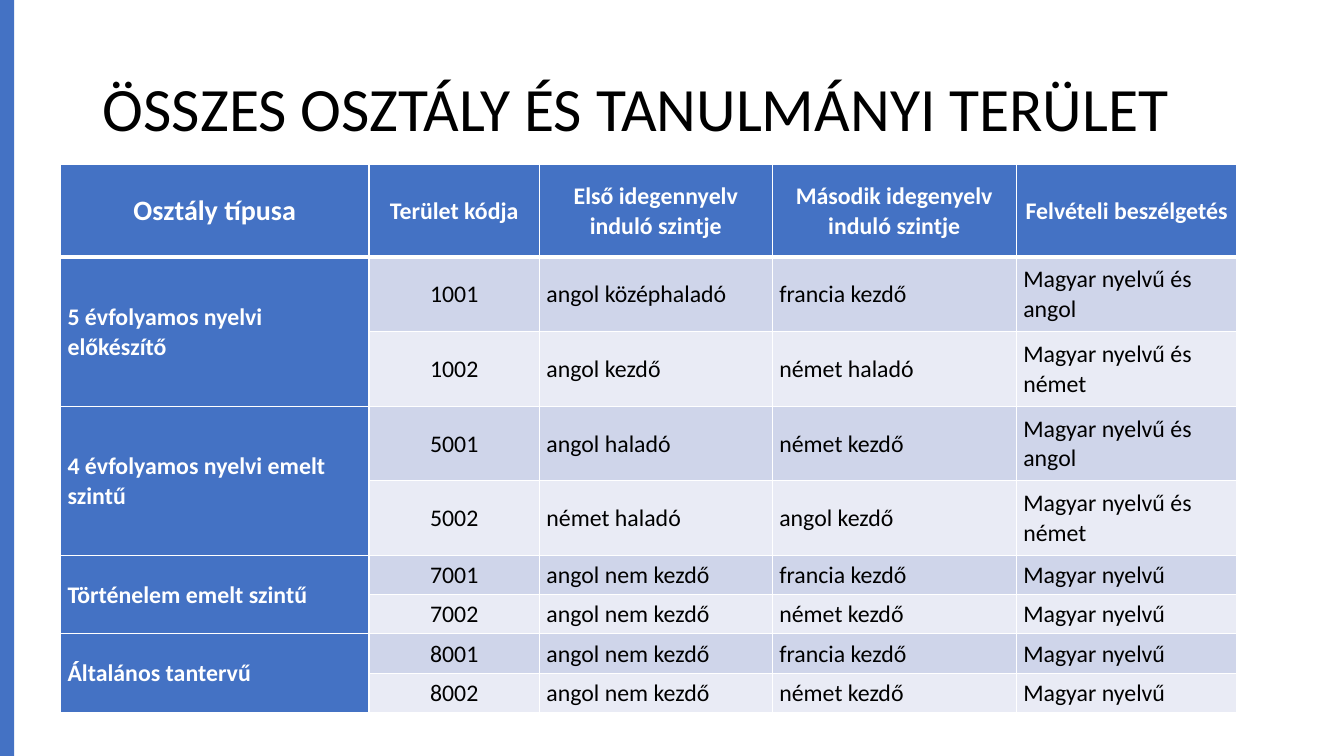
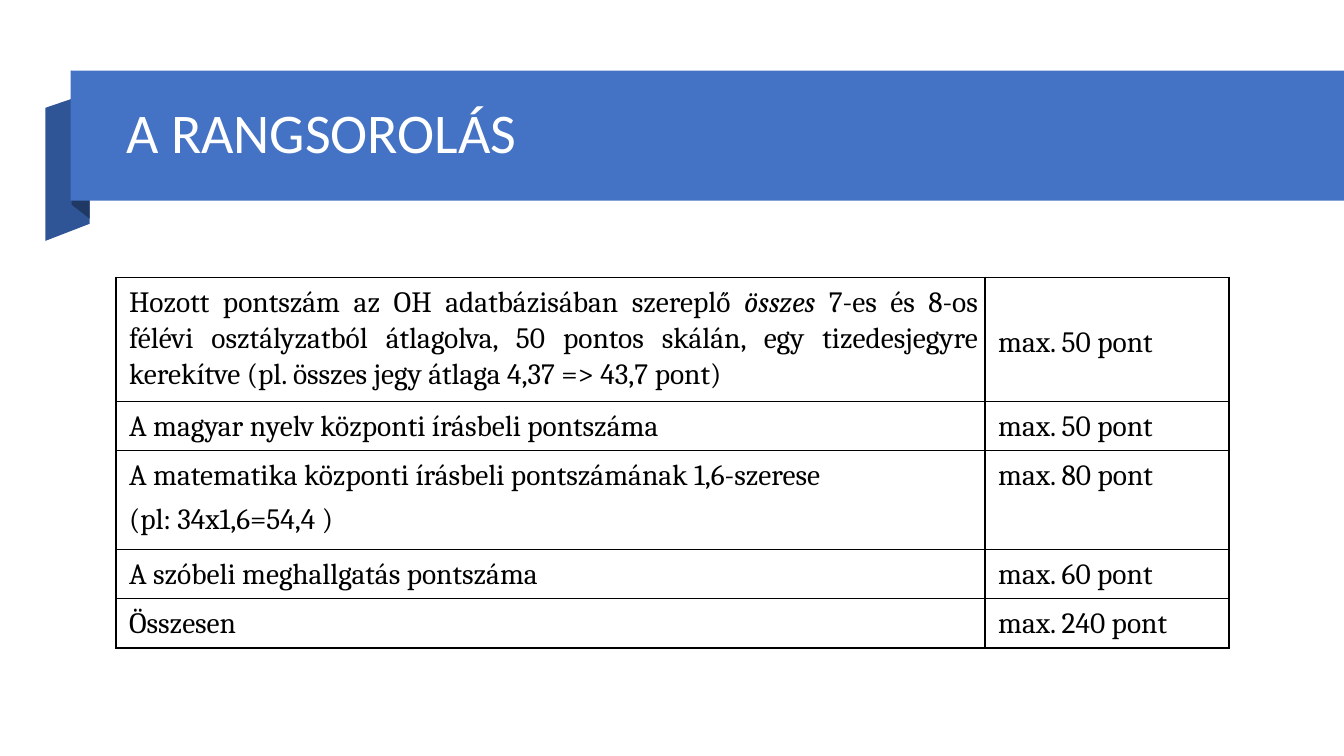
from lxml import etree
from pptx import Presentation
from pptx.dml.color import RGBColor
from pptx.enum.shapes import MSO_SHAPE
from pptx.enum.text import MSO_ANCHOR, MSO_AUTO_SIZE, PP_ALIGN
from pptx.oxml.ns import qn
from pptx.util import Emu, Pt

RECTANGLE = MSO_SHAPE.RECTANGLE
TOP, MIDDLE, BOTTOM = MSO_ANCHOR.TOP, MSO_ANCHOR.MIDDLE, MSO_ANCHOR.BOTTOM
LEFT, CENTER, JUSTIFY = PP_ALIGN.LEFT, PP_ALIGN.CENTER, PP_ALIGN.JUSTIFY
NO_AUTOFIT = MSO_AUTO_SIZE.NONE

EMU_PER_PX = 9144
SLIDE_WIDTH, SLIDE_HEIGHT = 1333, 750
TITLE_ONLY = 5
BLUE, DARK_BLUE, NAVY = "4472C4", "2F5597", "203864"
BAND_COLORS = ("CFD5EA", "E9EBF5")
BLACK, WHITE = "000000", "FFFFFF"
SANS, SERIF = "Calibri", "Cambria"

CLASS_HEADERS = (
    "Osztály típusa",
    "Terület kódja",
    "Első idegennyelv induló szintje",
    "Második idegenyelv induló szintje",
    "Felvételi beszélgetés",
)
CLASS_GROUPS = (
    ("5 évfolyamos nyelvi előkészítő", (
        ("1001", "angol középhaladó", "francia kezdő", "Magyar nyelvű és angol"),
        ("1002", "angol kezdő", "német haladó", "Magyar nyelvű és német"),
    )),
    ("4 évfolyamos nyelvi emelt szintű", (
        ("5001", "angol haladó", "német kezdő", "Magyar nyelvű és angol"),
        ("5002", "német haladó", "angol kezdő", "Magyar nyelvű és német"),
    )),
    ("Történelem emelt szintű", (
        ("7001", "angol nem kezdő", "francia kezdő", "Magyar nyelvű"),
        ("7002", "angol nem kezdő", "német kezdő", "Magyar nyelvű"),
    )),
    ("Általános tantervű", (
        ("8001", "angol nem kezdő", "francia kezdő", "Magyar nyelvű"),
        ("8002", "angol nem kezdő", "német kezdő", "Magyar nyelvű"),
    )),
)
BROUGHT_SCORE = (
    ("Hozott pontszám az OH adatbázisában szereplő ", False),
    ("összes", True),
    (" 7-es és 8-os félévi osztályzatból átlagolva, 50 pontos skálán, "
     "egy tizedesjegyre kerekítve (pl. összes jegy átlaga 4,37 => 43,7 pont)", False),
)
SCORES = (
    ((BROUGHT_SCORE,), "max. 50 pont"),
    (("A magyar nyelv központi írásbeli pontszáma",), "max. 50 pont"),
    (("A matematika központi írásbeli pontszámának 1,6-szerese",
      "(pl: 34x1,6=54,4 )"), "max. 80 pont"),
    (("A szóbeli meghallgatás pontszáma",), "max. 60 pont"),
    (("Összesen",), "max. 240 pont"),
)


def px(length):
    return Emu(length * EMU_PER_PX)


def rgb(color):
    return RGBColor.from_string(color)


def set_font(paragraph, name, size, color, bold=False):
    font = paragraph.font
    font.name, font.size, font.bold = name, Pt(size), bold
    font.color.rgb = rgb(color)


def paint(shape, color):
    shape.shadow.inherit = False
    shape.fill.solid()
    shape.fill.fore_color.rgb = rgb(color)
    shape.line.fill.background()


def add_band(slide, left, top, width, height):
    band = slide.shapes.add_shape(RECTANGLE, px(left), px(top), px(width), px(height))
    paint(band, BLUE)


def add_fold(slide, points, color):
    builder = slide.shapes.build_freeform(*points[0], scale=EMU_PER_PX)
    builder.add_line_segments(points[1:], close=True)
    paint(builder.convert_to_shape(), color)


def place_title(slide, text, box, size, color, anchor):
    title = slide.shapes.title
    title.left, title.top, title.width, title.height = map(px, box)
    frame = title.text_frame
    frame.text = text
    frame.word_wrap = True
    frame.auto_size = NO_AUTOFIT
    frame.vertical_anchor = anchor
    heading = frame.paragraphs[0]
    heading.alignment = LEFT
    heading.line_spacing = 0.9
    set_font(heading, SANS, size, color)
    slide.shapes._spTree.append(title._element)


def add_grid(slide, left, top, widths, heights):
    table = slide.shapes.add_table(
        len(heights), len(widths), px(left), px(top), px(sum(widths)), px(sum(heights))
    ).table
    table.first_row = table.horz_banding = False
    for column, width in zip(table.columns, widths):
        column.width = px(width)
    for row, height in zip(table.rows, heights):
        row.height = px(height)
    return table


def set_borders(cell, color, top=1, bottom=1):
    properties = cell._tc.get_or_add_tcPr()
    sides = (("a:lnL", 1), ("a:lnR", 1), ("a:lnT", top), ("a:lnB", bottom))
    for position, (side, width) in enumerate(sides):
        border = etree.Element(qn(side), w=str(Pt(width)))
        fill = etree.SubElement(border, qn("a:solidFill"))
        etree.SubElement(fill, qn("a:srgbClr"), val=color)
        properties.insert(position, border)


def set_margins(cell, left, top, right):
    cell.margin_left, cell.margin_top, cell.margin_right = px(left), px(top), px(right)
    cell.margin_bottom = 0


def format_paragraph(paragraph, alignment, line_spacing):
    paragraph.alignment = alignment
    paragraph.line_spacing = line_spacing
    paragraph.space_after = Pt(5.3)


def fill_class_cell(cell, text, fill, size=17, color=BLACK, bold=False,
                    alignment=LEFT):
    cell.text = text
    cell.vertical_anchor = MIDDLE
    set_margins(cell, 7, 0, 7)
    cell.fill.solid()
    cell.fill.fore_color.rgb = rgb(fill)
    paragraph = cell.text_frame.paragraphs[0]
    format_paragraph(paragraph, alignment, 1.03)
    set_font(paragraph, SANS, size, color, bold)


def fill_score_cell(cell, paragraphs, anchor=TOP):
    cell.vertical_anchor = anchor
    set_margins(cell, 13, 6, 7)
    cell.fill.background()
    set_borders(cell, BLACK)
    frame = cell.text_frame
    for index, content in enumerate(paragraphs):
        paragraph = frame.add_paragraph() if index else frame.paragraphs[0]
        if isinstance(content, str):
            paragraph.text = content
            alignment = LEFT
        else:
            alignment = JUSTIFY
            for text, italic in content:
                run = paragraph.add_run()
                run.text = text
                run.font.italic = italic
        format_paragraph(paragraph, alignment, 1.07)
        set_font(paragraph, SERIF, 21, BLACK)


def add_class_table(slide):
    heights = [92] + [74] * 4 + [39] * 4
    table = add_grid(slide, 60, 163, (306, 169, 231, 242, 219), heights)
    for column, header in enumerate(CLASS_HEADERS):
        size = 17 if column else 20
        fill_class_cell(table.cell(0, column), header, BLUE, size, WHITE, True, CENTER)
    first_row = 1
    for class_type, areas in CLASS_GROUPS:
        type_cell = table.cell(first_row, 0)
        type_cell.merge(table.cell(first_row + len(areas) - 1, 0))
        fill_class_cell(type_cell, class_type, BLUE, color=WHITE, bold=True)
        for offset, area in enumerate(areas):
            fill = BAND_COLORS[offset % len(BAND_COLORS)]
            for column, text in enumerate(area, 1):
                alignment = CENTER if column == 1 else LEFT
                fill_class_cell(table.cell(first_row + offset, column), text, fill,
                                alignment=alignment)
        first_row += len(areas)
    for index, row in enumerate(table.rows):
        for cell in row.cells:
            set_borders(cell, WHITE, 3 if index == 1 else 1, 3 if index == 0 else 1)


def add_score_table(slide):
    table = add_grid(slide, 115, 275, (862, 242), (123, 49, 98, 49, 49))
    for row, (description, maximum) in enumerate(SCORES):
        fill_score_cell(table.cell(row, 0), description)
        fill_score_cell(table.cell(row, 1), (maximum,), TOP if row else MIDDLE)


def build_classes(slide):
    place_title(slide, "ÖSSZES OSZTÁLY ÉS TANULMÁNYI TERÜLET",
                (92, 32, 1135, 117), 44, BLACK, BOTTOM)
    add_band(slide, 0, 0, 14, SLIDE_HEIGHT)
    add_class_table(slide)


def build_ranking(slide):
    add_fold(slide, ((89, 222), (45, 239), (45, 107), (89, 92)), DARK_BLUE)
    add_fold(slide, ((89, 217), (71, 203), (71, 70), (89, 85)), NAVY)
    add_band(slide, 70, 70, SLIDE_WIDTH - 70, 129)
    place_title(slide, "A RANGSOROLÁS", (115, 86, 1127, 96), 40, WHITE, MIDDLE)
    add_score_table(slide)


def main():
    presentation = Presentation()
    presentation.slide_width = px(SLIDE_WIDTH)
    presentation.slide_height = px(SLIDE_HEIGHT)
    for build in (build_classes, build_ranking):
        build(presentation.slides.add_slide(presentation.slide_layouts[TITLE_ONLY]))
    presentation.save("out.pptx")


if __name__ == "__main__":
    main()
